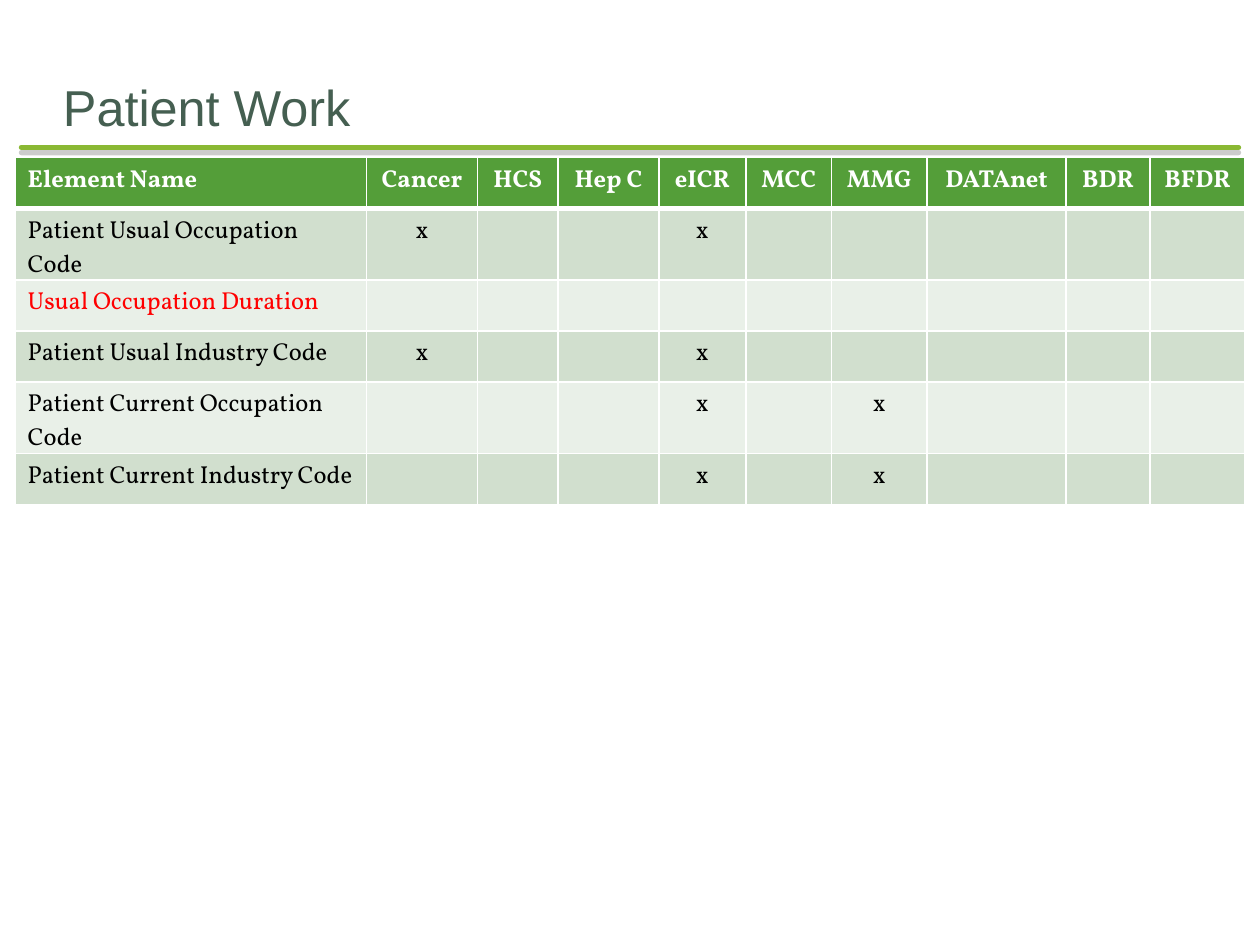
from lxml.etree import SubElement
from pptx import Presentation
from pptx.dml.color import RGBColor
from pptx.enum.shapes import MSO_CONNECTOR
from pptx.enum.text import MSO_ANCHOR, PP_ALIGN
from pptx.oxml import parse_xml
from pptx.oxml.ns import nsdecls, qn
from pptx.util import Inches, Pt

hues = {
    "title": "455F51", "rule": "8AB833", "shade": "808080",
    "head": "549E39", "odd": "D1DFCE", "even": "E9F0E8",
    "white": "FFFFFF", "black": "000000", "red": "FF0000",
}
fonts = {
    "title": {"name": "Arial", "size": Pt(28.8), "bold": False},
    "head": {"name": "Vollkorn", "size": Pt(14), "bold": True},
    "body": {"name": "Vollkorn", "size": Pt(14), "bold": False},
}
heads = ["Element Name", "Cancer", "HCS", "Hep C", "eICR", "MCC", "MMG",
         "DATAnet", "BDR", "BFDR"]
marks = {
    "Patient Usual Occupation Code": ["Cancer", "eICR"],
    "Usual Occupation Duration": [],
    "Patient Usual Industry Code": ["Cancer", "eICR"],
    "Patient Current Occupation Code": ["eICR", "MMG"],
    "Patient Current Industry Code": ["eICR", "MMG"],
}
widths = [2.79, 0.88, 0.64, 0.8, 0.69, 0.68, 0.76, 1.1, 0.67, 0.75]


def write(para, text, style, hue):
    run = para.add_run()
    run.text = text
    for key, value in fonts[style].items():
        setattr(run.font, key, value)
    run.font.color.rgb = RGBColor.from_string(hues[hue])


def edge(cell, sides):
    props = cell._tc.get_or_add_tcPr()
    for place, (side, width) in enumerate(sides.items()):
        line = parse_xml(
            f'<a:{side} {nsdecls("a")} w="{Pt(width)}"><a:solidFill>'
            f'<a:srgbClr val="{hues["white"]}"/></a:solidFill></a:{side}>')
        props.insert(place, line)


deck = Presentation()
deck.slide_width, deck.slide_height = Inches(10), Inches(7.5)
slide = deck.slides.add_slide(deck.slide_layouts[6])

rule = slide.shapes.add_connector(
    MSO_CONNECTOR.STRAIGHT, Inches(0.17), Inches(1.17), Inches(9.83), Inches(1.17))
rule.line.width = Pt(3)
rule.line.color.rgb = RGBColor.from_string(hues["rule"])
rule.line._get_or_add_ln().set("cap", "rnd")
glow = SubElement(rule._element.spPr, qn("a:effectLst"))
shade = SubElement(glow, qn("a:outerShdw"), blurRad="0", dist=str(Pt(3)),
                   dir="5400000", rotWithShape="0")
tint = SubElement(shade, qn("a:srgbClr"), val=hues["shade"])
SubElement(tint, qn("a:alpha"), val="40000")

title = slide.shapes.add_textbox(Inches(0.5), Inches(0.5), Inches(9), Inches(0.58))
frame = title.text_frame
form = {
    "word_wrap": True, "vertical_anchor": MSO_ANCHOR.BOTTOM,
    "margin_left": 0, "margin_right": 0,
    "margin_top": Inches(0.05), "margin_bottom": 0,
}
for key, value in form.items():
    setattr(frame, key, value)
write(frame.paragraphs[0], "Patient Work", "title", "title")

rows = [heads]
for name, used in marks.items():
    rows.append([name] + ["x" if head in used else "" for head in heads[1:]])

grid = slide.shapes.add_table(
    len(rows), len(heads), Inches(0.12), Inches(1.25),
    Inches(sum(widths)), Inches(0.405 * len(rows))).table
for col, width in zip(grid.columns, widths):
    col.width = Inches(width)

for r, row in enumerate(rows):
    grid.rows[r].height = Inches(0.405)
    band = "head" if r == 0 else "odd" if r % 2 else "even"
    style = "head" if r == 0 else "body"
    ink = "white" if r == 0 else "black" if any(row[1:]) else "red"
    for c, text in enumerate(row):
        cell = grid.cell(r, c)
        cell.fill.solid()
        cell.fill.fore_color.rgb = RGBColor.from_string(hues[band])
        edge(cell, {"lnL": 1, "lnR": 1, "lnT": 3 if r == 1 else 1,
                    "lnB": 3 if r == 0 else 1})
        para = cell.text_frame.paragraphs[0]
        para.alignment = PP_ALIGN.CENTER if c else PP_ALIGN.LEFT
        if text:
            write(para, text, style, ink)

deck.save("out.pptx")
